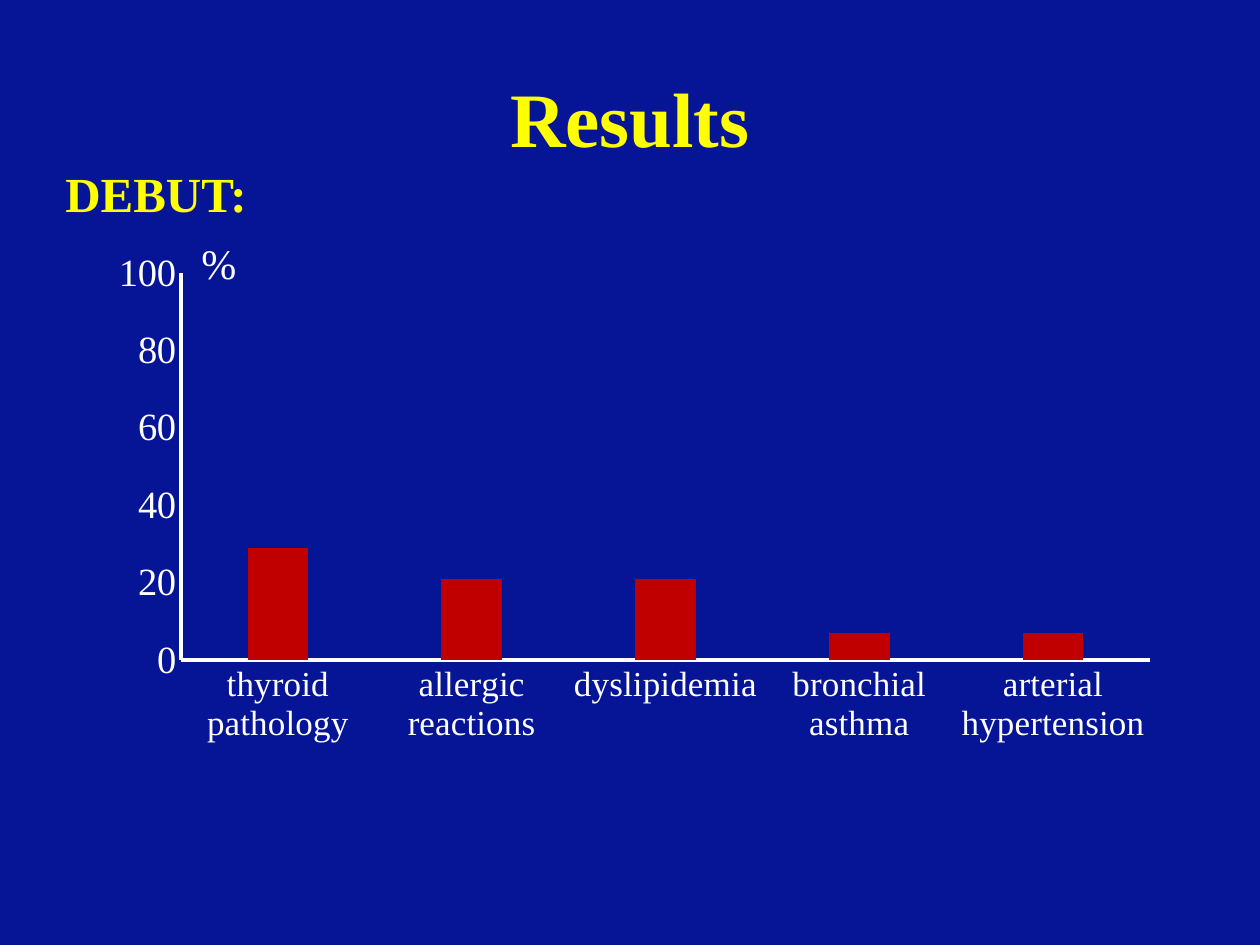
from lxml import etree
from pptx import Presentation
from pptx import util as u
from pptx.chart.data import CategoryChartData
from pptx.dml.color import RGBColor
from pptx.enum import chart as charts, text
from pptx.oxml import parse_xml
from pptx.oxml.ns import nsdecls

FONT = "Times New Roman"
WHITE, YELLOW, RED, NAVY = "FFFFFF", "FFFF00", "C00000", "061496"


def px(value):
    return u.Emu(round(value * 914400 / 126))


def paint(target, colour):
    target.solid()
    target.fore_color.rgb = RGBColor.from_string(colour)


presentation = Presentation()
presentation.slide_width, presentation.slide_height = px(1260), px(945)
slide = presentation.slides.add_slide(presentation.slide_layouts[6])
paint(slide.background.fill, NAVY)

categories = {
    "thyroid pathology": 29,
    "allergic reactions": 21,
    "dyslipidemia": 21,
    "bronchial asthma": 7,
    "arterial hypertension": 7,
}
data = CategoryChartData(number_format="0")
data.categories = list(categories)
data.add_series("Series 1", list(categories.values()))
chart = slide.shapes.add_chart(
    charts.XL_CHART_TYPE.COLUMN_CLUSTERED, px(84), px(252), px(1071), px(687), data
).chart
chart.has_legend = False
chart.has_title = False
chart.font.name = FONT

plot = chart.plots[0]
for name, value in {"gap_width": 219, "overlap": -27, "vary_by_categories": False}.items():
    setattr(plot, name, value)
paint(plot.series[0].format.fill, RED)

value_axis = chart.value_axis
scale = {"minimum_scale": 0, "maximum_scale": 100, "major_unit": 20, "has_major_gridlines": False}
for name, value in scale.items():
    setattr(value_axis, name, value)

for axis, size in ((chart.category_axis, 20), (value_axis, 22)):
    axis.major_tick_mark = axis.minor_tick_mark = charts.XL_TICK_MARK.NONE
    paint(axis.format.line.fill, WHITE)
    axis.format.line.width = u.Pt(2)
    font = axis.tick_labels.font
    for name, value in {"name": FONT, "size": u.Pt(size), "bold": False}.items():
        setattr(font, name, value)
    paint(font.fill, WHITE)

plot_area = chart.element.find(".//{*}plotArea")
for old_layout in plot_area.findall("{*}layout"):
    plot_area.remove(old_layout)
layout = parse_xml(f"<c:layout {nsdecls('c')}><c:manualLayout/></c:layout>")
chart_namespace = etree.QName(layout).namespace
placement = {
    "layoutTarget": "inner", "xMode": "edge", "yMode": "edge",
    "x": 0.09, "y": 0.03, "w": 0.91, "h": 0.56,
}
placement.update(x=round(97 / 1071, 4), y=round(21 / 687, 4), w=round(969 / 1071, 4), h=round(387 / 687, 4))
for name, value in placement.items():
    etree.SubElement(layout[0], f"{{{chart_namespace}}}{name}", val=str(value))
plot_area.insert(0, layout)

labels = (
    ("Results", (63, 38, 1134, 157), 44, YELLOW, True, "CENTER", "MIDDLE", True, 0),
    ("DEBUT:", (53, 157, 1144, 687), 28, YELLOW, True, "LEFT", "TOP", True, 2),
    ("%", (189, 231, 60, 63), 24, WHITE, False, "LEFT", "TOP", False, 0),
)
for words, box, size, colour, bold, align, anchor, wrap, before in labels:
    frame = slide.shapes.add_textbox(*map(px, box)).text_frame
    frame.word_wrap = wrap
    frame.vertical_anchor = text.MSO_ANCHOR[anchor]
    paragraph = frame.paragraphs[0]
    paragraph.alignment = text.PP_ALIGN[align]
    paragraph.space_before = u.Pt(before)
    run = paragraph.add_run()
    run.text = words
    for name, value in {"name": FONT, "size": u.Pt(size), "bold": bold}.items():
        setattr(run.font, name, value)
    paint(run.font.fill, colour)

presentation.save("out.pptx")
